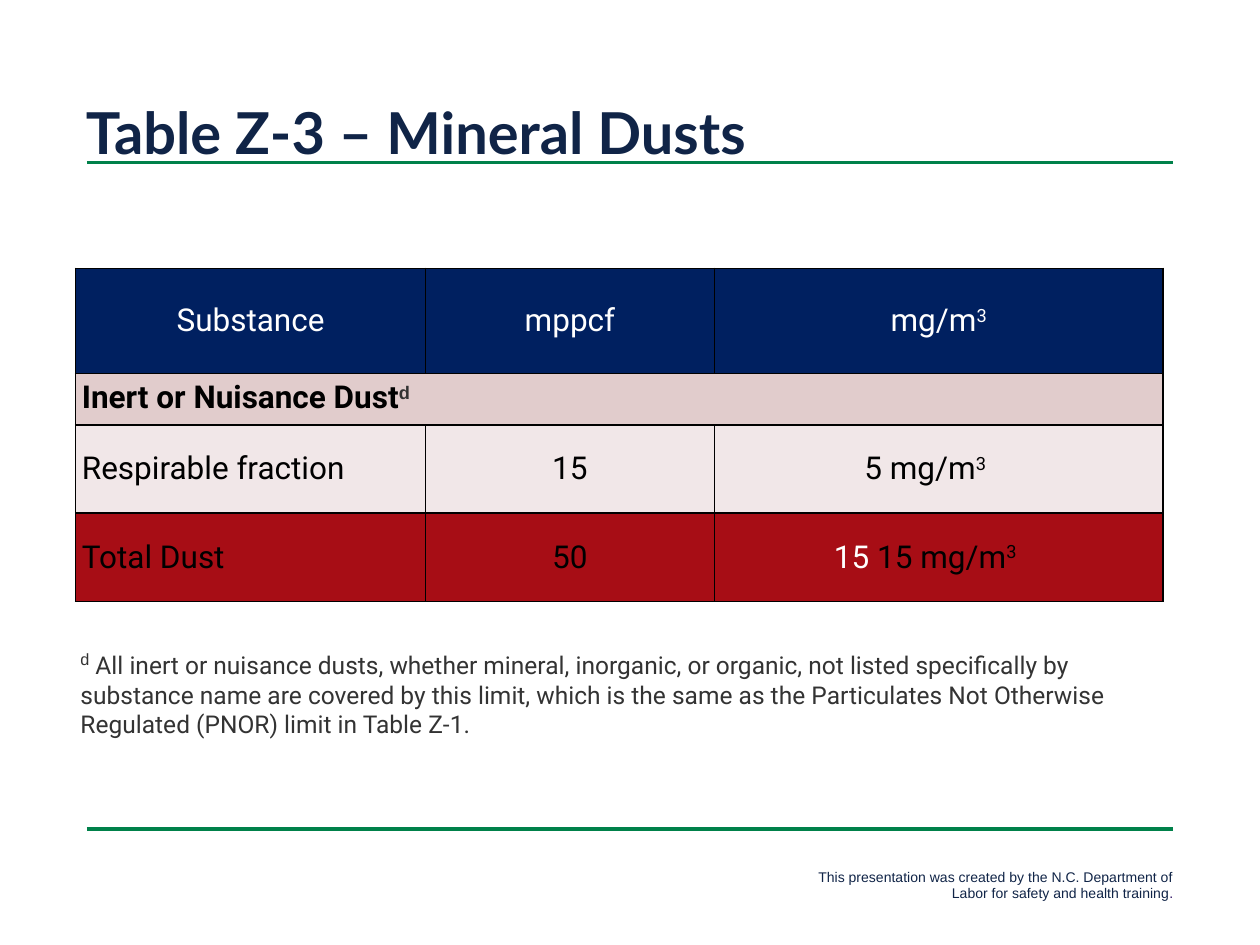
from dataclasses import dataclass

from lxml.etree import SubElement
from pptx import Presentation
from pptx.dml.color import RGBColor
from pptx.enum.shapes import MSO_CONNECTOR
from pptx.enum.text import MSO_ANCHOR, MSO_AUTO_SIZE, PP_ALIGN
from pptx.oxml.ns import qn
from pptx.util import Pt

NAVY = "102447"
GREEN = "00814A"
BLACK = "000000"
WHITE = "FFFFFF"
GRAY = "333333"


@dataclass
class TextRun:
    text: str
    size: float = 18
    color: str = BLACK
    font: str = "Roboto"
    bold: bool = False
    raised: bool = False


@dataclass
class TableRow:
    height: float
    fill: str
    cells: list[list[TextRun]]
    label_align: PP_ALIGN = PP_ALIGN.LEFT
    anchor: MSO_ANCHOR = MSO_ANCHOR.MIDDLE
    last_right_margin: float = 3.6


COLUMN_WIDTHS = [200, 165, 256.5]
CELL_MARGIN = 3.6
ROWS = [
    TableRow(60, "002060", [
        [TextRun("Substance", color=WHITE)],
        [TextRun("mppcf", color=WHITE)],
        [TextRun("mg/m", color=WHITE), TextRun("3", color=WHITE, raised=True)],
    ], label_align=PP_ALIGN.CENTER),
    TableRow(29.5, "E1CCCC", [
        [TextRun("Inert or Nuisance Dust", bold=True),
         TextRun("d", color=GRAY, font="Arial", bold=True, raised=True)],
    ], anchor=MSO_ANCHOR.TOP),
    TableRow(50.4, "F1E7E8", [
        [TextRun("Respirable fraction")],
        [TextRun("15")],
        [TextRun("5 mg/m"), TextRun("3", raised=True)],
    ], last_right_margin=19),
    TableRow(50.4, "A70D15", [
        [TextRun("Total Dust")],
        [TextRun("50")],
        [TextRun("15 ", color=WHITE), TextRun("15 mg/m"), TextRun("3", raised=True)],
    ], last_right_margin=19),
]


def rgb(color: str) -> RGBColor:
    return RGBColor.from_string(color)


def write_runs(paragraph, runs: list[TextRun], align: PP_ALIGN = PP_ALIGN.LEFT) -> None:
    paragraph.alignment = align
    for item in runs:
        run = paragraph.add_run()
        run.text = item.text
        run.font.size = Pt(item.size)
        run.font.name = item.font
        run.font.bold = item.bold
        run.font.color.rgb = rgb(item.color)
        if item.raised:
            run.font._element.set("baseline", "30000")


def add_rule(slide, top: float) -> None:
    """Draw a full-width green line."""
    line = slide.shapes.add_connector(
        MSO_CONNECTOR.STRAIGHT, Pt(49.7), Pt(top), Pt(670.3), Pt(top))
    line.line.color.rgb = rgb(GREEN)
    line.line.width = Pt(2)
    SubElement(line._element.spPr, qn("a:effectLst"))


def add_text(slide, left: float, top: float, width: float, height: float,
             runs: list[TextRun], align: PP_ALIGN = PP_ALIGN.LEFT) -> None:
    box = slide.shapes.add_textbox(Pt(left), Pt(top), Pt(width), Pt(height))
    box.text_frame.word_wrap = True
    write_runs(box.text_frame.paragraphs[0], runs, align)


def set_title(slide, runs: list[TextRun]) -> None:
    title = slide.shapes.title
    title.left, title.top, title.width, title.height = Pt(41.8), Pt(22.3), Pt(617.8), Pt(181.4)
    frame = title.text_frame
    frame.auto_size = MSO_AUTO_SIZE.NONE
    frame.vertical_anchor = MSO_ANCHOR.TOP
    frame.margin_top = Pt(33)
    write_runs(frame.paragraphs[0], runs)


def add_borders(cell) -> None:
    properties = cell._tc.get_or_add_tcPr()
    for side in ("lnL", "lnR", "lnT", "lnB"):
        border = SubElement(properties, qn(f"a:{side}"), w=str(Pt(1)))
        fill = SubElement(border, qn("a:solidFill"))
        SubElement(fill, qn("a:srgbClr"), val=BLACK)


def add_dust_table(slide) -> None:
    table = slide.shapes.add_table(
        len(ROWS), len(COLUMN_WIDTHS), Pt(43.2), Pt(153.4),
        Pt(sum(COLUMN_WIDTHS)), Pt(sum(row.height for row in ROWS))).table
    table.first_row = table.horz_banding = False
    for column, width in zip(table.columns, COLUMN_WIDTHS):
        column.width = Pt(width)
    last = len(COLUMN_WIDTHS) - 1
    for row_index, row in enumerate(ROWS):
        table.rows[row_index].height = Pt(row.height)
        for column_index in range(last + 1):
            cell = table.cell(row_index, column_index)
            cell.margin_left = cell.margin_top = cell.margin_bottom = Pt(CELL_MARGIN)
            cell.margin_right = Pt(row.last_right_margin if column_index == last else CELL_MARGIN)
            cell.vertical_anchor = row.anchor
            add_borders(cell)
            cell.fill.solid()
            cell.fill.fore_color.rgb = rgb(row.fill)
            if column_index < len(row.cells):
                align = PP_ALIGN.CENTER if column_index else row.label_align
                write_runs(cell.text_frame.paragraphs[0], row.cells[column_index], align)
        if len(row.cells) == 1:
            table.cell(row_index, 0).merge(table.cell(row_index, last))


def main() -> None:
    presentation = Presentation()
    presentation.slide_width, presentation.slide_height = Pt(720), Pt(540)
    slide = presentation.slides.add_slide(presentation.slide_layouts[5])
    for top in (92.9, 473.8):
        add_rule(slide, top)
    add_text(slide, 443.5, 492.5, 234, 26.6, [
        TextRun("This presentation was created by the N.C. Department of Labor "
                "for safety and health training", 8, NAVY, "Arial"),
        TextRun(".", 8, "2B0E62", "Arial"),
    ], PP_ALIGN.RIGHT)
    set_title(slide, [TextRun("Table Z-3 – Mineral Dusts", 33, NAVY, "Lato", bold=True)])
    add_dust_table(slide)
    add_text(slide, 38.9, 365.8, 630, 92.2, [
        TextRun("d", 16, GRAY, "Arial", raised=True),
        TextRun(" All inert or nuisance dusts, whether mineral, inorganic, or organic, "
                "not listed specifically by substance name are covered by this limit, "
                "which is the same as the Particulates Not Otherwise Regulated (PNOR) "
                "limit in Table Z-1.", 14, GRAY),
    ])
    presentation.save("out.pptx")


if __name__ == "__main__":
    main()
